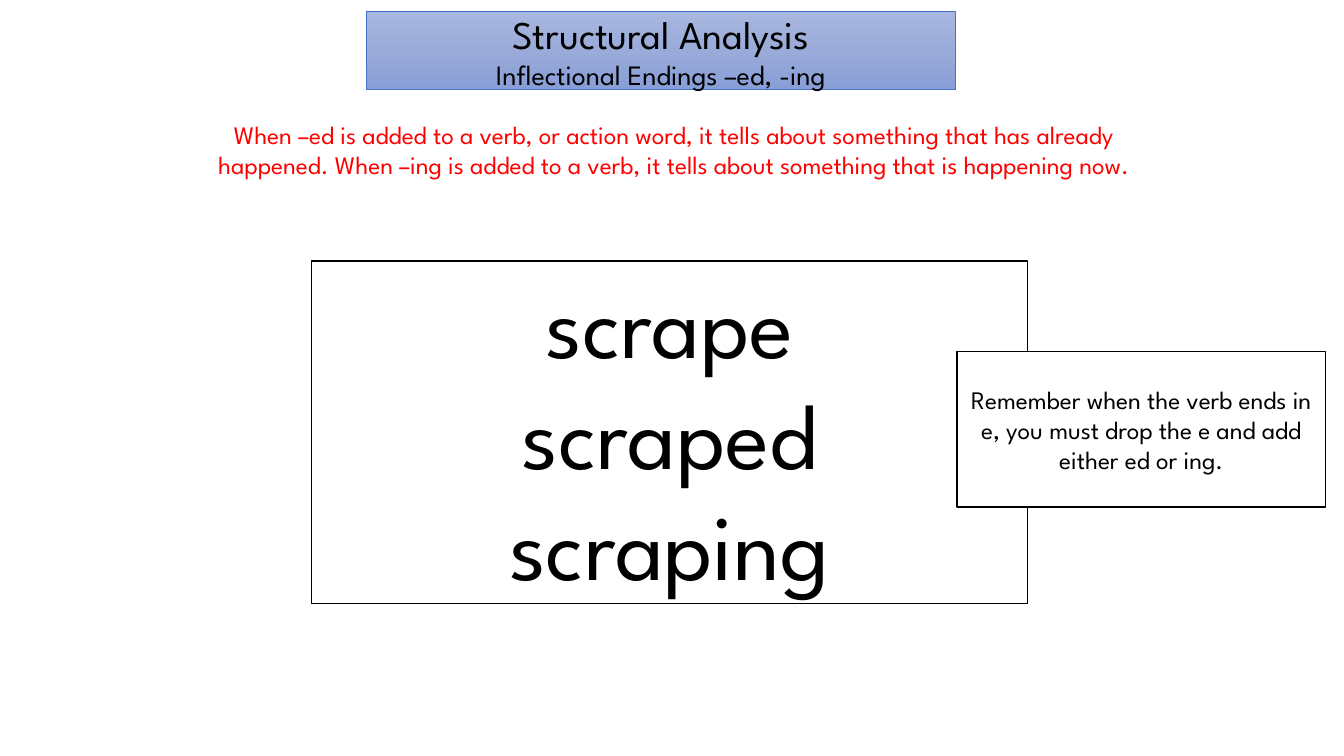
"""Build a structural analysis slide about the endings -ed and -ing."""
from copy import deepcopy
from dataclasses import dataclass

from pptx import Presentation
from pptx.dml.color import RGBColor
from pptx.enum.shapes import MSO_SHAPE
from pptx.enum.text import MSO_ANCHOR, PP_ALIGN
from pptx.oxml.ns import qn
from pptx.util import Inches, Pt


@dataclass(frozen=True)
class Theme:
    """Font, colours and type sizes of the slide."""
    font: str = "League Spartan"
    ink: str = "000000"
    paper: str = "FFFFFF"
    rule: str = "FF0000"
    banner_line: str = "4472C4"
    banner_stops: tuple = ((0, "A8B7DF"), (0.5, "9AABD9"), (1, "889ED7"))
    title: int = 28
    subtitle: int = 20
    body: int = 18
    word: int = 66


THEME = Theme()


def rgb(value):
    """Turn a hex string into a colour."""
    return RGBColor.from_string(value)


def write_lines(shape, lines, color=THEME.ink, anchor=MSO_ANCHOR.MIDDLE):
    """Write centred paragraphs given as (text, size) pairs."""
    frame = shape.text_frame
    frame.word_wrap = True
    frame.vertical_anchor = anchor
    frame.text = "\n".join(text for text, _ in lines)
    for paragraph, (_, size) in zip(frame.paragraphs, lines):
        paragraph.alignment = PP_ALIGN.CENTER
        for run in paragraph.runs:
            run.font.name = THEME.font
            run.font.size = Pt(size)
            run.font.color.rgb = rgb(color)


def add_box(slide, box, lines, line_color=THEME.ink, line_width=1):
    """Add an outlined white rectangle with text."""
    shape = slide.shapes.add_shape(MSO_SHAPE.RECTANGLE, *map(Inches, box))
    shape.shadow.inherit = False
    shape.fill.solid()
    shape.fill.fore_color.rgb = rgb(THEME.paper)
    shape.line.color.rgb = rgb(line_color)
    shape.line.width = Pt(line_width)
    write_lines(shape, lines)
    return shape


def add_banner(slide, box, lines):
    """Add a title box shaded from top to bottom."""
    shape = add_box(slide, box, lines, THEME.banner_line, 0.5)
    shape.fill.gradient()
    shape.fill.gradient_angle = 270
    stop_list = shape.element.spPr.find(".//" + qn("a:gsLst"))
    stop_list.insert(1, deepcopy(stop_list[0]))
    for stop, (position, color) in zip(shape.fill.gradient_stops, THEME.banner_stops):
        stop.position = position
        stop.color.rgb = rgb(color)


def add_rule(slide, box, text):
    """Add the grammar rule as a plain text box."""
    shape = slide.shapes.add_textbox(*map(Inches, box))
    write_lines(shape, [(text, THEME.body)], THEME.rule, MSO_ANCHOR.TOP)


def main():
    """Build and save the slide."""
    presentation = Presentation()
    presentation.slide_width = Inches(13.33)
    presentation.slide_height = Inches(7.5)
    slide = presentation.slides.add_slide(presentation.slide_layouts[6])

    add_banner(slide, (3.63, 0.11, 5.85, 0.78), [
        ("Structural Analysis", THEME.title),
        ("Inflectional Endings –ed, -ing", THEME.subtitle),
    ])
    add_box(slide, (3.09, 2.59, 7.1, 3.4),
            [(word, THEME.word) for word in ("scrape", "scraped", "scraping")])
    add_rule(slide, (1.93, 1.13, 9.51, 1.01),
             "When –ed is added to a verb, or action word, it tells about something "
             "that has already happened. When –ing is added to a verb, it tells about "
             "something that is happening now.")
    add_box(slide, (9.49, 3.49, 3.66, 1.54), [
        ("Remember when the verb ends in e, you must drop the e and add either ed or ing.",
         THEME.body),
    ])
    presentation.save("out.pptx")


if __name__ == "__main__":
    main()
